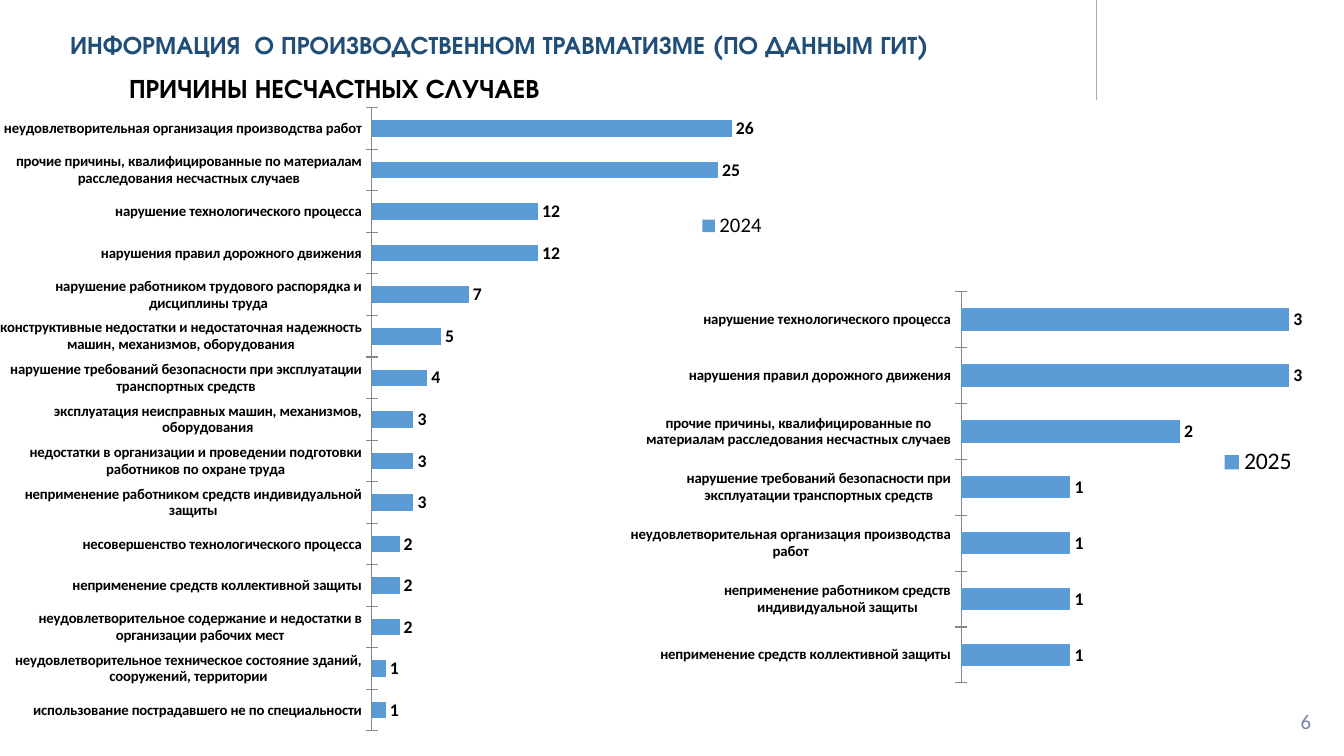
import pptx
import pptx.chart.data
import pptx.dml.color
import pptx.enum.chart
import pptx.enum.shapes
import pptx.enum.text
import pptx.oxml
import pptx.oxml.ns
import pptx.util
from dataclasses import dataclass

Inches = pptx.util.Inches
Pt = pptx.util.Pt
RGB = pptx.dml.color.RGBColor.from_string
Align = pptx.enum.text.PP_ALIGN
Anchor = pptx.enum.text.MSO_ANCHOR
XL = pptx.enum.chart


@dataclass(frozen=True)
class Theme:
    heading_font: str = "TeX Gyre Adventor"
    body_font: str = "Calibri"
    title: str = "1F4E79"
    text: str = "000000"
    number: str = "7688A1"
    rule: str = "AFABAB"
    axis: str = "868686"
    bar: str = "5B9BD5"
    title_size: float = 17
    subtitle_size: float = 18
    number_size: float = 14
    chart_size: float = 18
    category_size: float = 10
    value_size: float = 12
    line_width: float = 0.75


def apply(target, **values):
    for name, value in values.items():
        setattr(target, name, value)


def set_layout(element, **fractions):
    """Place a chart part by fractions of the chart; h and w are sizes."""
    old = element.find(pptx.oxml.ns.qn("c:layout"))
    if old is not None:
        element.remove(old)
    inner = '<c:layoutTarget val="inner"/>' if element.tag.endswith("plotArea") else ""
    modes = "".join(f'<c:{key}Mode val="edge"/>' for key in "xy")
    sizes = "".join(f'<c:{key} val="{fractions[key]}"/>' for key in "xywh")
    layout = pptx.oxml.parse_xml(
        f'<c:layout {pptx.oxml.ns.nsdecls("c")}><c:manualLayout>'
        f"{inner}{modes}{sizes}</c:manualLayout></c:layout>")
    before = element.find(pptx.oxml.ns.qn("c:legendPos"))
    element.insert(0 if before is None else element.index(before) + 1, layout)


class Deck:
    def __init__(self, theme, width, height):
        self.theme = theme
        self.prs = pptx.Presentation()
        apply(self.prs, slide_width=Inches(width), slide_height=Inches(height))
        self.s = self.prs.slides.add_slide(self.prs.slide_layouts[6])

    def font(self, font, size, color, name=None, bold=False):
        apply(font, name=name or self.theme.body_font, size=Pt(size), bold=bold)
        font.color.rgb = RGB(color)

    def line(self, x1, y1, x2, y2):
        sp = self.s.shapes.add_connector(
            pptx.enum.shapes.MSO_CONNECTOR.STRAIGHT, *map(Inches, (x1, y1, x2, y2)))
        sp.line.color.rgb = RGB(self.theme.rule)
        sp.line.width = Pt(self.theme.line_width)
        sp._element.spPr.append(pptx.oxml.parse_xml(
            f'<a:effectLst {pptx.oxml.ns.nsdecls("a")}/>'))

    def text(self, box, text, style, frame=None, paragraph=None):
        tf = self.s.shapes.add_textbox(*map(Inches, box)).text_frame
        apply(tf, word_wrap=True, **(frame or {}))
        p = tf.paragraphs[0]
        apply(p, **(paragraph or {}))
        r = p.add_run()
        r.text = text
        self.font(r.font, **style)

    def bar_chart(self, box, name, rows, maximum, plot_left, legend, legend_size):
        """Draw horizontal bars; rows run from the bottom bar to the top one."""
        t = self.theme
        data = pptx.chart.data.CategoryChartData(number_format="0")
        data.categories = [label for label, _ in rows]
        data.add_series(name, [value for _, value in rows])
        chart = self.s.shapes.add_chart(
            XL.XL_CHART_TYPE.BAR_CLUSTERED, *map(Inches, box), data).chart
        apply(chart, has_title=False, has_legend=True)
        self.font(chart.font, t.chart_size, t.text)

        apply(chart.legend, position=XL.XL_LEGEND_POSITION.RIGHT, include_in_layout=False)
        self.font(chart.legend.font, legend_size, t.text)
        set_layout(chart.legend._element, **legend)
        set_layout(chart._chartSpace.chart.plotArea,
                   x=plot_left, y=0.007, w=round(1 - plot_left, 3), h=0.993)

        apply(chart.value_axis, visible=False, has_major_gridlines=False,
              minimum_scale=0, maximum_scale=maximum)
        axis = chart.category_axis
        apply(axis, major_tick_mark=XL.XL_TICK_MARK.CROSS,
              minor_tick_mark=XL.XL_TICK_MARK.NONE, has_major_gridlines=False)
        axis.format.line.color.rgb = RGB(t.axis)
        axis.format.line.width = Pt(t.line_width)
        self.font(axis.tick_labels.font, t.category_size, t.text, bold=True)

        plot = chart.plots[0]
        apply(plot, gap_width=150, vary_by_categories=False, has_data_labels=True)
        fill = plot.series[0].format.fill
        fill.solid()
        fill.fore_color.rgb = RGB(t.bar)
        apply(plot.data_labels, show_value=True, number_format="0",
              number_format_is_linked=False,
              position=XL.XL_LABEL_POSITION.OUTSIDE_END)
        self.font(plot.data_labels.font, t.value_size, t.text, bold=True)


COLLECTIVE = "неприменение средств коллективной защиты"
PERSONAL = "неприменение работником средств индивидуальной защиты"
ORGANIZATION = "неудовлетворительная организация производства работ"
TRANSPORT = "нарушение требований безопасности при эксплуатации транспортных средств"
OTHER = "прочие причины, квалифицированные по материалам расследования несчастных случаев"
TRAFFIC = "нарушения правил дорожного движения"
PROCESS = "нарушение технологического процесса"

CAUSES_2024 = [
    ("использование пострадавшего не по специальности", 1),
    ("неудовлетворительное техническое состояние зданий, сооружений, территории", 1),
    ("неудовлетворительное содержание и недостатки в организации рабочих мест", 2),
    (COLLECTIVE, 2),
    ("несовершенство технологического процесса", 2),
    (PERSONAL, 3),
    ("недостатки в организации и проведении подготовки работников по охране труда", 3),
    ("эксплуатация неисправных машин, механизмов, оборудования", 3),
    (TRANSPORT, 4),
    ("конструктивные недостатки и недостаточная надежность машин, механизмов, оборудования", 5),
    ("нарушение работником трудового распорядка и дисциплины труда", 7),
    (TRAFFIC, 12),
    (PROCESS, 12),
    (OTHER, 25),
    (ORGANIZATION, 26),
]
CAUSES_2025 = [
    (COLLECTIVE, 1), (PERSONAL, 1), (ORGANIZATION, 1), (TRANSPORT, 1),
    (OTHER, 2), (TRAFFIC, 3), (PROCESS, 3),
]


def main():
    t = Theme()
    deck = Deck(t, 12.6, 7.09)
    deck.line(10.28, 0, 10.28, 0.94)
    deck.text((0.56, 0.26, 9.77, 0.97),
              "ИНФОРМАЦИЯ  О ПРОИЗВОДСТВЕННОМ ТРАВМАТИЗМЕ (ПО ДАННЫМ ГИТ)",
              dict(size=t.title_size, color=t.title, name=t.heading_font, bold=True),
              paragraph=dict(line_spacing=0.9))
    deck.text((1.21, 0.66, 4.67, 0.32), "ПРИЧИНЫ НЕСЧАСТНЫХ СЛУЧАЕВ",
              dict(size=t.subtitle_size, color=t.text, name=t.heading_font, bold=True),
              frame=dict(margin_left=0, margin_top=Inches(0.01),
                         margin_right=0, margin_bottom=0))
    deck.bar_chart((0, 0.97, 7.38, 5.89), "2024", CAUSES_2024, 30, 0.47,
                   dict(x=0.88, y=0.17, w=0.1, h=0.05), 14)
    deck.text((9.45, 6.57, 2.94, 0.38), "6",
              dict(size=t.number_size, color=t.number),
              frame=dict(vertical_anchor=Anchor.MIDDLE),
              paragraph=dict(alignment=Align.RIGHT))
    deck.bar_chart((5.89, 2.71, 6.71, 3.7), "2025", CAUSES_2025, 3.5, 0.465,
                   dict(x=0.82, y=0.4, w=0.12, h=0.08), 16)
    deck.prs.save("out.pptx")


if __name__ == "__main__":
    main()
